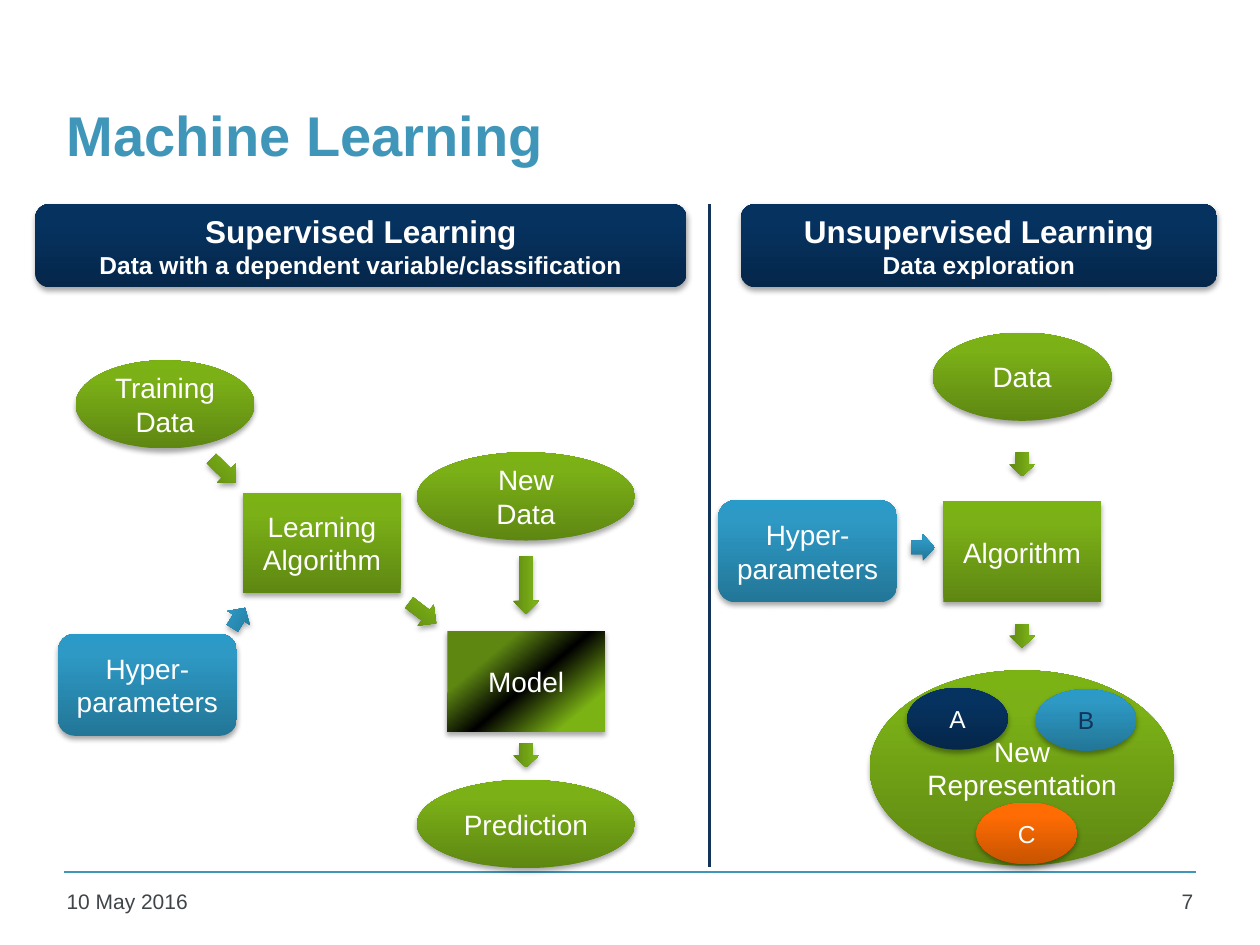
from dataclasses import dataclass

import pptx
import pptx.dml.color
import pptx.enum.shapes
import pptx.enum.text
import pptx.oxml
import pptx.oxml.ns
import pptx.util

Kind = pptx.enum.shapes.MSO_SHAPE
Align = pptx.enum.text.PP_ALIGN
Anchor = pptx.enum.text.MSO_ANCHOR

# The slide is a grid of 100 columns and 75 rows of square cells
CELL = 0.1
FONT = "Arial"
WHITE, NAVY_TEXT, TEAL, GREY = "FFFFFF", "113458", "4096B8", "3F4548"

# Gradients: angle in degrees, then stops of (percent, colour)
GREEN = (270, ((0, "5E8712"), (80, "7BB017"), (100, "7CB314")))
NAVY = (270, ((0, "05274A"), (80, "063260"), (100, "043262")))
BLUE = (270, ((0, "227697"), (80, "2D99C4"), (100, "2A9BC8")))
ORANGE = (270, ((0, "C75300"), (80, "FF6C04"), (100, "FF6D05")))
BLACK_BAND = (50, ((26, "5E8712"), (52, "000000"), (83, "7CB314")))

# Sizes in columns and rows
SMALL_OVAL, WIDE_OVAL, GROUP_OVAL = (14.2, 7), (17.3, 7), (24.2, 15.5)
CLUSTER, STEP, SETTING = (8, 4.9), (12.5, 8), (14.2, 8.1)

# Centre columns of the two vertical flows
MODEL_COLUMN, DATA_COLUMN = 41.75, 81.12


@dataclass(frozen=True)
class Node:
    text: str
    column: float
    row: float
    size: tuple[float, float]
    kind: Kind
    gradient: tuple = GREEN
    points: tuple[int, ...] = (16,)
    color: str = WHITE
    bold: bool = False


@dataclass(frozen=True)
class Arrow:
    column: float
    row: float
    length: float = 1.9
    rotation: float = 90
    gradient: tuple = GREEN


NODES = [
    # Headers
    Node("Supervised Learning\nData with a dependent variable/classification",
         28.65, 19.5, (51.7, 6.6), Kind.ROUNDED_RECTANGLE, NAVY, (18, 14), bold=True),
    Node("Unsupervised Learning\nData exploration",
         77.7, 19.5, (37.8, 6.6), Kind.ROUNDED_RECTANGLE, NAVY, (18, 14), bold=True),
    # Supervised flow
    Node("Training\nData", 13.1, 32.1, SMALL_OVAL, Kind.OVAL),
    Node("Learning\nAlgorithm", 25.55, 43.1, STEP, Kind.RECTANGLE),
    Node("Hyper-parameters", 11.7, 54.35, SETTING, Kind.ROUNDED_RECTANGLE, BLUE),
    Node("New\nData", MODEL_COLUMN, 39.4, WIDE_OVAL, Kind.OVAL),
    Node("Model", MODEL_COLUMN, 54.1, STEP, Kind.RECTANGLE, BLACK_BAND),
    Node("Prediction", MODEL_COLUMN, 65.4, WIDE_OVAL, Kind.OVAL),
    # Unsupervised flow
    Node("Data", DATA_COLUMN, 29.9, SMALL_OVAL, Kind.OVAL),
    Node("Hyper-parameters", 64.1, 43.75, SETTING, Kind.ROUNDED_RECTANGLE, BLUE),
    Node("Algorithm", DATA_COLUMN, 43.8, STEP, Kind.RECTANGLE),
    Node("New\nRepresentation", DATA_COLUMN, 60.95, GROUP_OVAL, Kind.OVAL),
    Node("A", 76, 57.05, CLUSTER, Kind.OVAL, NAVY, (14,)),
    Node("B", 86.2, 57.15, CLUSTER, Kind.OVAL, BLUE, (14,), NAVY_TEXT),
    Node("C", 81.5, 66.15, CLUSTER, Kind.OVAL, ORANGE, (14,)),
]

ARROWS = [
    Arrow(17.75, 37.35, 2.7, 44.4),
    Arrow(33.55, 48.65, 2.7, 37.4),
    Arrow(18.95, 49.05, rotation=302.1, gradient=BLUE),
    Arrow(MODEL_COLUMN, 46.45, 4.6),
    Arrow(MODEL_COLUMN, 59.95),
    Arrow(DATA_COLUMN, 36.85),
    Arrow(DATA_COLUMN, 50.45),
    Arrow(73.25, 43.45, rotation=0, gradient=BLUE),
]


def cells(count: float) -> pptx.util.Length:
    return pptx.util.Inches(count * CELL)


def rgb(value: str) -> pptx.dml.color.RGBColor:
    return pptx.dml.color.RGBColor.from_string(value)


def set_text(text_frame, text: str, points: tuple[int, ...], color: str,
             alignment: Align, anchor: Anchor, bold: bool = False) -> None:
    """Fill a frame; the last size serves any further paragraphs."""
    text_frame.text = text
    text_frame.word_wrap = True
    text_frame.auto_size = pptx.enum.text.MSO_AUTO_SIZE.NONE
    text_frame.vertical_anchor = anchor
    for index, paragraph in enumerate(text_frame.paragraphs):
        paragraph.alignment = alignment
        for run in paragraph.runs:
            run.font.name = FONT
            run.font.size = pptx.util.Pt(points[min(index, len(points) - 1)])
            run.font.bold = bold
            run.font.color.rgb = rgb(color)


def add_shaded_shape(slide, kind: Kind, column: float, row: float,
                     size: tuple[float, float], gradient: tuple):
    """Add a shape centred on a grid point, with gradient and soft shadow."""
    width, height = size
    shape = slide.shapes.add_shape(kind, cells(column - width / 2), cells(row - height / 2),
                                   cells(width), cells(height))
    shape.line.fill.background()
    shape.shadow.inherit = False
    namespace = pptx.oxml.ns.nsdecls("a")
    angle, stops = gradient
    properties = shape._element.spPr
    shape.fill.gradient()
    stop_xml = "".join(f'<a:gs pos="{percent * 1000}"><a:srgbClr val="{color}"/></a:gs>'
                       for percent, color in stops)
    gradient_fill = pptx.oxml.parse_xml(
        f'<a:gradFill {namespace} rotWithShape="1"><a:gsLst>{stop_xml}</a:gsLst>'
        f'<a:lin ang="{angle * 60000}" scaled="0"/></a:gradFill>')
    properties.replace(properties.find(pptx.oxml.ns.qn("a:gradFill")), gradient_fill)
    properties.find(pptx.oxml.ns.qn("a:effectLst")).append(pptx.oxml.parse_xml(
        f'<a:outerShdw {namespace} blurRad="{pptx.util.Pt(3.1)}" dist="{pptx.util.Pt(1.8)}" '
        'dir="5400000" rotWithShape="0"><a:srgbClr val="000000">'
        '<a:alpha val="35000"/></a:srgbClr></a:outerShdw>'))
    return shape


def add_node(slide, node: Node) -> None:
    shape = add_shaded_shape(slide, node.kind, node.column, node.row, node.size, node.gradient)
    shape.text_frame.margin_left = shape.text_frame.margin_right = cells(0.5)
    set_text(shape.text_frame, node.text, node.points, node.color,
             Align.CENTER, Anchor.MIDDLE, node.bold)


def add_arrow(slide, arrow: Arrow) -> None:
    shape = add_shaded_shape(slide, Kind.RIGHT_ARROW, arrow.column, arrow.row,
                             (arrow.length, 2.1), arrow.gradient)
    shape.rotation = arrow.rotation


def add_rule(slide, start: tuple[float, float], end: tuple[float, float],
             color: str, width: float) -> None:
    connector = slide.shapes.add_connector(pptx.enum.shapes.MSO_CONNECTOR.STRAIGHT,
                                           *map(cells, start + end))
    connector.line.color.rgb = rgb(color)
    connector.line.width = pptx.util.Pt(width)
    connector._element.spPr.append(
        pptx.oxml.parse_xml(f'<a:effectLst {pptx.oxml.ns.nsdecls("a")}/>'))


def add_footer(slide, text: str, left: float, width: float, alignment: Align) -> None:
    box = slide.shapes.add_textbox(cells(left), cells(70.05), cells(width), cells(3.6))
    set_text(box.text_frame, text, (12,), GREY, alignment, Anchor.TOP)


def main() -> None:
    presentation = pptx.Presentation()
    presentation.slide_width, presentation.slide_height = cells(100), cells(75)
    slide = presentation.slides.add_slide(presentation.slide_layouts[5])

    # Title
    title = slide.shapes.title
    title.left, title.top, title.width, title.height = map(cells, (4.3, 4.4, 90.7, 12.5))
    set_text(title.text_frame, "Machine Learning", (32,), TEAL, Align.LEFT, Anchor.MIDDLE, True)

    # Footer
    add_rule(slide, (5.1, 69.2), (94.9, 69.2), TEAL, 1)
    add_footer(slide, "10 May 2016", 4.3, 22, Align.LEFT)
    add_footer(slide, "7", 88.6, 7.1, Align.RIGHT)

    # Diagram
    add_rule(slide, (56.3, 16.2), (56.3, 68.8), NAVY_TEXT, 1.5)
    for node in NODES:
        add_node(slide, node)
    for arrow in ARROWS:
        add_arrow(slide, arrow)

    presentation.save("out.pptx")


if __name__ == "__main__":
    main()
